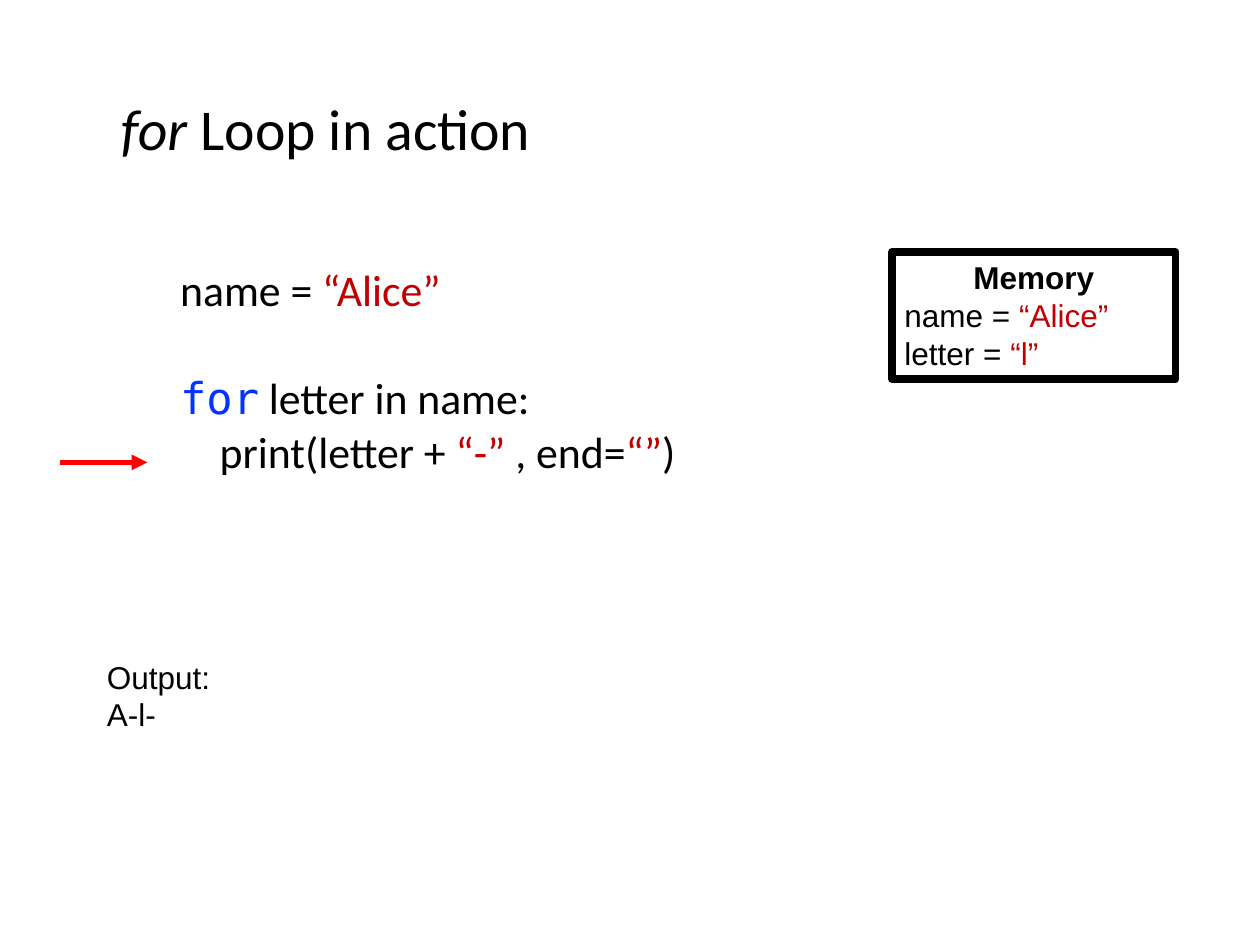
from lxml import etree
from pptx import Presentation
from pptx.dml.color import RGBColor
from pptx.enum.shapes import MSO_CONNECTOR as Connector, MSO_SHAPE as Shape
from pptx.enum.text import MSO_ANCHOR as Anchor, MSO_AUTO_SIZE as AutoSize, PP_ALIGN as Align
from pptx.oxml.ns import qn
from pptx.util import Inches, Pt

BLACK = RGBColor(0x00, 0x00, 0x00)
STRING_RED = RGBColor(0xC0, 0x00, 0x00)
KEYWORD_BLUE = RGBColor(0x04, 0x32, 0xFF)
ARROW_RED = RGBColor(0xFF, 0x00, 0x00)

HEADING_FONT = "Calibri"
LABEL_FONT = "Arial"
CODE_FONT = "DejaVu Sans Mono"

STRING = {"color": STRING_RED}
KEYWORD = {"color": KEYWORD_BLUE, "font": CODE_FONT}
ITALIC = {"italic": True}
BOLD = {"bold": True}


class SlideBuilder:
    title_size = 33
    code_size = 25
    label_size = 18
    line_spacing = 0.9
    code_gap = 3.8
    blank_line_gap = 35

    def __init__(self, presentation):
        self.slide = presentation.slides.add_slide(presentation.slide_layouts[1])

    def place(self, shape, left, top, width, height):
        shape.left, shape.top = Inches(left), Inches(top)
        shape.width, shape.height = Inches(width), Inches(height)

    def fill_text(self, text_frame, lines, font, size):
        text_frame.word_wrap = True
        text_frame.auto_size = AutoSize.NONE
        for index, line in enumerate(lines):
            paragraph = text_frame.add_paragraph() if index else text_frame.paragraphs[0]
            paragraph.alignment = Align.LEFT
            for text, style in line:
                run = paragraph.add_run()
                run.text = text
                run.font.name = style.get("font", font)
                run.font.size = Pt(size)
                run.font.bold = style.get("bold", False)
                run.font.italic = style.get("italic", False)
                run.font.color.rgb = style.get("color", BLACK)
        return text_frame.paragraphs

    def title(self, line, *box):
        title = self.slide.shapes.title
        self.place(title, *box)
        title.text_frame.vertical_anchor = Anchor.MIDDLE
        paragraphs = self.fill_text(title.text_frame, [line], HEADING_FONT, self.title_size)
        paragraphs[0].line_spacing = self.line_spacing

    def code(self, blocks, *box):
        body = self.slide.placeholders[1]
        self.place(body, *box)
        lines = [line for block in blocks for line in block]
        paragraphs = self.fill_text(body.text_frame, lines, HEADING_FONT, self.code_size)
        for paragraph in paragraphs:
            properties = paragraph._p.get_or_add_pPr()
            properties.set("marL", "0")
            properties.set("indent", "0")
            etree.SubElement(properties, qn("a:buNone"))
            paragraph.line_spacing = self.line_spacing
            paragraph.space_before = Pt(self.code_gap)
        start = 0
        for block in blocks:
            paragraphs[start].space_before = Pt(self.blank_line_gap if start else 0)
            start += len(block)

    def memory_box(self, lines, *box):
        shape = self.slide.shapes.add_shape(Shape.RECTANGLE, *map(Inches, box))
        shape.shadow.inherit = False
        shape.fill.background()
        shape.line.color.rgb = BLACK
        shape.line.width = Pt(4.5)
        shape.text_frame.vertical_anchor = Anchor.TOP
        paragraphs = self.fill_text(shape.text_frame, lines, LABEL_FONT, self.label_size)
        paragraphs[0].alignment = Align.CENTER

    def label(self, lines, *box):
        text_box = self.slide.shapes.add_textbox(*map(Inches, box))
        self.fill_text(text_box.text_frame, lines, LABEL_FONT, self.label_size)

    def arrow(self, *ends):
        connector = self.slide.shapes.add_connector(Connector.STRAIGHT, *map(Inches, ends))
        connector.line.color.rgb = ARROW_RED
        connector.line.width = Pt(3)
        properties = connector._element.spPr
        etree.SubElement(properties.find(qn("a:ln")), qn("a:tailEnd"), type="triangle")
        etree.SubElement(properties, qn("a:effectLst"))


def main():
    presentation = Presentation()
    presentation.slide_width, presentation.slide_height = Inches(10), Inches(7.5)
    builder = SlideBuilder(presentation)

    assignment = [("name = ", {}), ("“Alice”", STRING)]
    loop = [
        [("for", KEYWORD), (" letter in name:", {})],
        [("    print(letter + ", {}), ("“-”", STRING), (" , end=", {}),
         ("“”", STRING), (")", {})],
    ]
    memory = [
        [("Memory", BOLD)],
        assignment,
        [("letter = ", {}), ("“l”", STRING)],
    ]
    output = [[("Output:", {})], [("A-l-", {})]]

    builder.title([("for", ITALIC), (" Loop in action", {})], 0.86, 0.67, 8.67, 0.75)
    builder.code([[assignment], loop], 1.33, 2.08, 4.33, 4.58)
    builder.memory_box(memory, 7.08, 2, 2.25, 1.01)
    builder.arrow(0.48, 3.67, 1.17, 3.67)
    builder.label(output, 0.75, 5.17, 4.08, 1.01)

    presentation.save("out.pptx")


if __name__ == "__main__":
    main()
